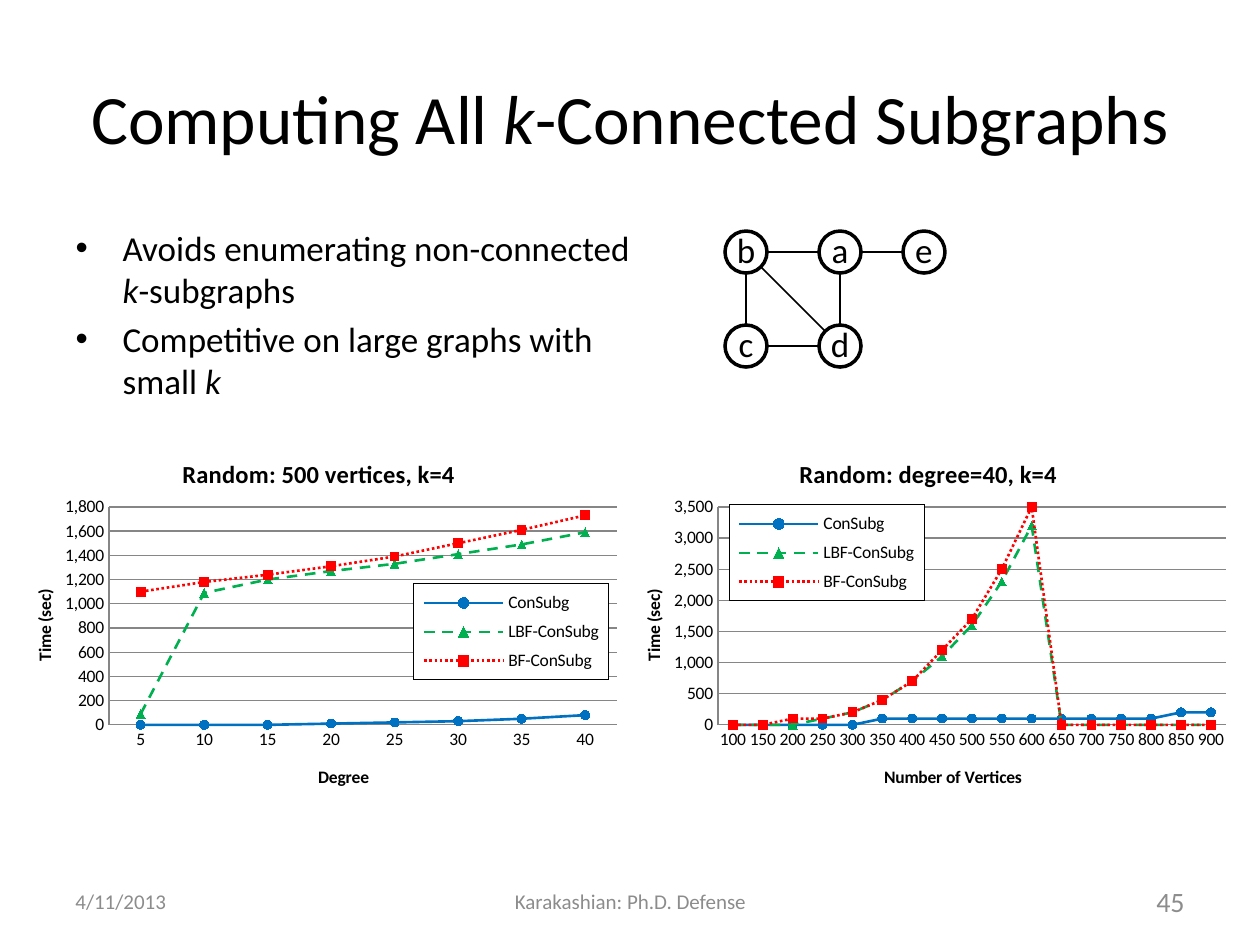
from math import hypot

from lxml.etree import SubElement
from pptx import Presentation
from pptx.chart.data import CategoryChartData
from pptx.dml.color import RGBColor
from pptx.enum.chart import XL_CHART_TYPE as ChartType, XL_LEGEND_POSITION as LegendPos
from pptx.enum.chart import XL_MARKER_STYLE as Marker, XL_TICK_MARK as Tick
from pptx.enum.dml import MSO_LINE as Dash
from pptx.enum.shapes import MSO_CONNECTOR as Connector, MSO_SHAPE as Shape
from pptx.enum.text import MSO_ANCHOR as Anchor, PP_ALIGN as Align
from pptx.oxml import parse_xml
from pptx.oxml.ns import nsdecls, qn
from pptx.util import Pt

EMU_PER_PX = 914400 / 126


def px(length):
    return round(length * EMU_PER_PX)


def rgb(color):
    return RGBColor.from_string(color)


class Deck:
    font, ink, muted, grid = "Calibri", "000000", "8C8C8C", "868686"

    def __init__(self, width, height):
        self.prs = Presentation()
        self.prs.slide_width, self.prs.slide_height = px(width), px(height)
        self.slide = self.prs.slides.add_slide(self.prs.slide_layouts[1])

    def style(self, font, size, color, bold=None):
        font.name, font.size, font.bold = self.font, Pt(size), bold
        font.color.rgb = rgb(color)

    def add_runs(self, paragraph, text, size, color=ink):
        """Add the runs of a text; pieces between asterisks are italic."""
        for i, piece in enumerate(text.split("*")):
            if piece:
                run = paragraph.add_run()
                run.text = piece
                self.style(run.font, size, color)
                run.font.italic = i % 2 == 1

    def place(self, shape, left, top, width, height):
        shape.left, shape.top, shape.width, shape.height = map(
            px, (left, top, width, height))

    def title(self, text, box, size):
        heading = self.slide.shapes.title
        self.place(heading, *box)
        heading.text_frame.vertical_anchor = Anchor.MIDDLE
        paragraph = heading.text_frame.paragraphs[0]
        paragraph.alignment = Align.CENTER
        self.add_runs(paragraph, text, size)

    def bullets(self, items, box, size, indent):
        body = self.slide.placeholders[1]
        self.place(body, *box)
        frame = body.text_frame
        for i, item in enumerate(items):
            paragraph = frame.add_paragraph() if i else frame.paragraphs[0]
            props = paragraph._p.get_or_add_pPr()
            props.set("marL", str(px(indent)))
            props.set("indent", str(-px(indent)))
            self.add_runs(paragraph, item, size)

    def footer(self, text, left, width, size, align):
        box = self.slide.shapes.add_textbox(px(left), px(876), px(width), px(50))
        frame = box.text_frame
        frame.word_wrap, frame.vertical_anchor = True, Anchor.MIDDLE
        frame.paragraphs[0].alignment = align
        self.add_runs(frame.paragraphs[0], text, size, self.muted)

    def vertex(self, label, x, y, radius):
        circle = self.slide.shapes.add_shape(
            Shape.OVAL, px(x - radius), px(y - radius), px(2 * radius), px(2 * radius))
        circle.shadow.inherit = False
        circle.fill.background()
        circle.line.color.rgb, circle.line.width = rgb(self.ink), Pt(2)
        frame = circle.text_frame
        frame.margin_left = frame.margin_right = frame.margin_top = 0
        frame.margin_bottom = px(6)
        frame.word_wrap, frame.vertical_anchor = False, Anchor.MIDDLE
        frame.paragraphs[0].alignment = Align.CENTER
        self.add_runs(frame.paragraphs[0], label, 20)

    def edge(self, start, end, radius):
        """Join two vertex centres, trimmed to the circles' rims."""
        (x1, y1), (x2, y2) = start, end
        length = hypot(x2 - x1, y2 - y1)
        dx, dy = radius * (x2 - x1) / length, radius * (y2 - y1) / length
        line = self.slide.shapes.add_connector(
            Connector.STRAIGHT, px(x1 + dx), px(y1 + dy), px(x2 - dx), px(y2 - dy))
        line.line.color.rgb, line.line.width = rgb(self.ink), Pt(1)
        SubElement(line._element.spPr, qn("a:effectLst"))

    def layout(self, part, size, left, top, width=None, height=None):
        """Fix a chart part, in px inside a chart of the given size."""
        for old in part.findall(qn("c:layout")):
            part.remove(old)
        inner = part.tag == qn("c:plotArea")
        tags = '<c:layoutTarget val="inner"/>' if inner else ""
        tags += '<c:xMode val="edge"/><c:yMode val="edge"/>'
        for name, value, total in zip("xywh", (left, top, width, height), size * 2):
            if value is not None:
                tags += f'<c:{name} val="{value / total:.4f}"/>'
        layout = parse_xml(f'<c:layout {nsdecls("c")}><c:manualLayout>{tags}'
                           '</c:manualLayout></c:layout>')
        if inner:
            part.insert(0, layout)
        else:
            part.find(qn("c:overlay")).addprevious(layout)

    def caption(self, heading, text, size):
        run = heading.text_frame.paragraphs[0].add_run()
        run.text = text
        self.style(run.font, size, self.ink, True)

    def line_chart(self, left, title, axis_name, top_value, step, categories, values,
                   title_left, axis_left, legend_at):
        size = (630, 378)
        data = CategoryChartData(number_format="General")
        data.categories = categories
        for name, numbers in zip(SERIES, values):
            gaps = [None] * (len(categories) - len(numbers))
            data.add_series(name, numbers + gaps)
        chart = self.slide.shapes.add_chart(
            ChartType.LINE_MARKERS, px(left), px(431), *map(px, size), data).chart
        self.style(chart.font, 10, self.ink)
        root = chart.element
        root.find(".//" + qn("c:dispBlanksAs")).set("val", "zero")
        self.layout(root.find(".//" + qn("c:plotArea")), size, 109, 76, 508, 218)

        # Titles
        chart.has_title = True
        self.caption(chart.chart_title, title, 14)
        self.layout(chart.chart_title.element, size, title_left, 22)
        axes = ((chart.category_axis, axis_name, (axis_left, 331)),
                (chart.value_axis, "Time (sec)", (30, 155)))
        for axis, name, spot in axes:
            self.caption(axis.axis_title, name, 10)
            self.layout(axis.axis_title.element, size, *spot)
            axis.major_tick_mark = axis.minor_tick_mark = Tick.NONE
            axis.format.line.color.rgb = rgb(self.grid)

        # Scale and gridlines
        scale = chart.value_axis
        scale.minimum_scale, scale.maximum_scale, scale.major_unit = 0, top_value, step
        scale.tick_labels.number_format = "#,##0;[Red]#,##0"
        scale.tick_labels.number_format_is_linked = False
        scale.major_gridlines.format.line.color.rgb = rgb(self.grid)

        # Series
        chart.plots[0].vary_by_categories = False
        for series, (color, dash, marker) in zip(chart.plots[0].series, SERIES.values()):
            series.smooth = False
            line = series.format.line
            line.color.rgb, line.width, line.dash_style = rgb(color), Pt(1.5), dash
            series.marker.style, series.marker.size = marker, 5
            series.marker.format.fill.solid()
            series.marker.format.fill.fore_color.rgb = rgb(color)
            series.marker.format.line.color.rgb = rgb(color)

        # Legend over the plot
        chart.has_legend = True
        chart.legend.position = LegendPos.LEFT
        chart.legend.include_in_layout = True
        legend = root.find(".//" + qn("c:legend"))
        self.layout(legend, size, *legend_at, 195, 96)
        legend.find(qn("c:overlay")).addnext(parse_xml(
            f'<c:spPr {nsdecls("c", "a")}><a:solidFill><a:srgbClr val="FFFFFF"/></a:solidFill>'
            f'<a:ln><a:solidFill><a:srgbClr val="{self.ink}"/></a:solidFill></a:ln></c:spPr>'))


SERIES = {
    "ConSubg": ("0070C0", Dash.SOLID, Marker.CIRCLE),
    "LBF-ConSubg": ("00B050", Dash.DASH, Marker.TRIANGLE),
    "BF-ConSubg": ("FF0000", Dash.ROUND_DOT, Marker.SQUARE),
}
VERTICES = {"c": (746, 346), "d": (840, 346), "e": (924, 252),
            "a": (840, 252), "b": (746, 252)}
RADIUS = 21


def main():
    deck = Deck(1260, 945)
    deck.title("Computing All *k*-Connected Subgraphs", (63, 38, 1134, 158), 39.6)
    deck.bullets(["Avoids enumerating non-connected *k*-subgraphs",
                  "Competitive on large graphs with small *k*"],
                 (63, 220, 588, 220), 20, 47)

    # Footer
    deck.footer("4/11/2013", 63, 294, 12, Align.LEFT)
    deck.footer("Karakashian: Ph.D. Defense", 431, 399, 12, Align.CENTER)
    deck.footer("45", 903, 294, 16, Align.RIGHT)

    # Example graph
    for label, (x, y) in VERTICES.items():
        deck.vertex(label, x, y, RADIUS)
    for start, end in ("ba", "bc", "cd", "da", "ae", "db"):
        deck.edge(VERTICES[start], VERTICES[end], RADIUS)

    # Running times
    deck.line_chart(
        0, "Random: 500 vertices, k=4", "Degree", 1800, 200,
        [str(degree) for degree in range(5, 41, 5)],
        [[0, 0, 0, 10, 20, 30, 50, 80],
         [90, 1090, 1200, 1270, 1330, 1410, 1490, 1590],
         [1100, 1180, 1240, 1310, 1390, 1500, 1610, 1730]],
        title_left=178, axis_left=315, legend_at=(414, 153))
    deck.line_chart(
        609, "Random: degree=40, k=4", "Number of Vertices", 3500, 500,
        [str(count) for count in range(100, 901, 50)],
        [[0] * 5 + [100] * 10 + [200] * 2,
         [0, 0, 0, 100, 200, 400, 700, 1100, 1600, 2300, 3200],
         [0, 0, 100, 100, 200, 400, 700, 1200, 1700, 2500, 3500]],
        title_left=186, axis_left=272, legend_at=(120, 74))
    deck.prs.save("out.pptx")


if __name__ == "__main__":
    main()
